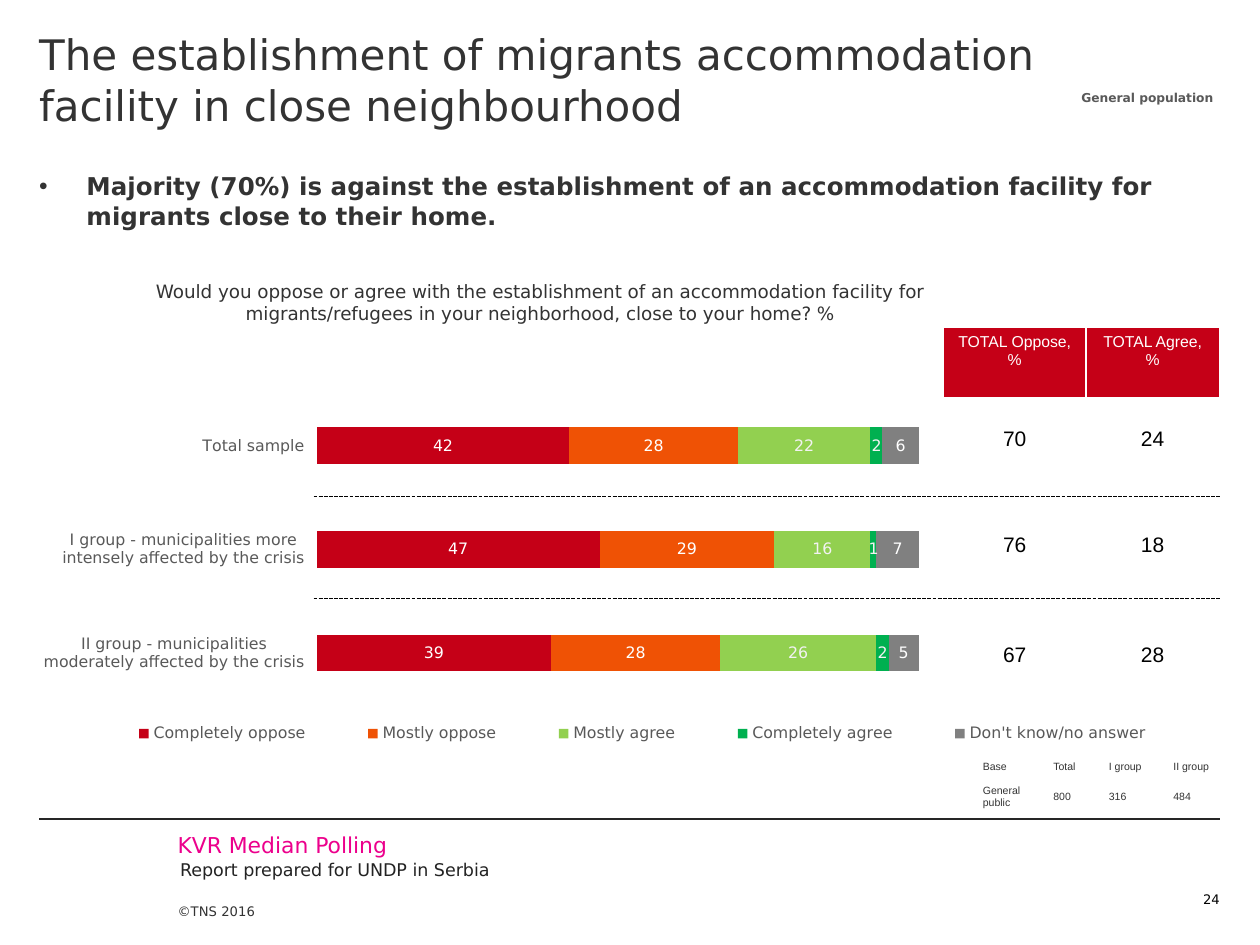
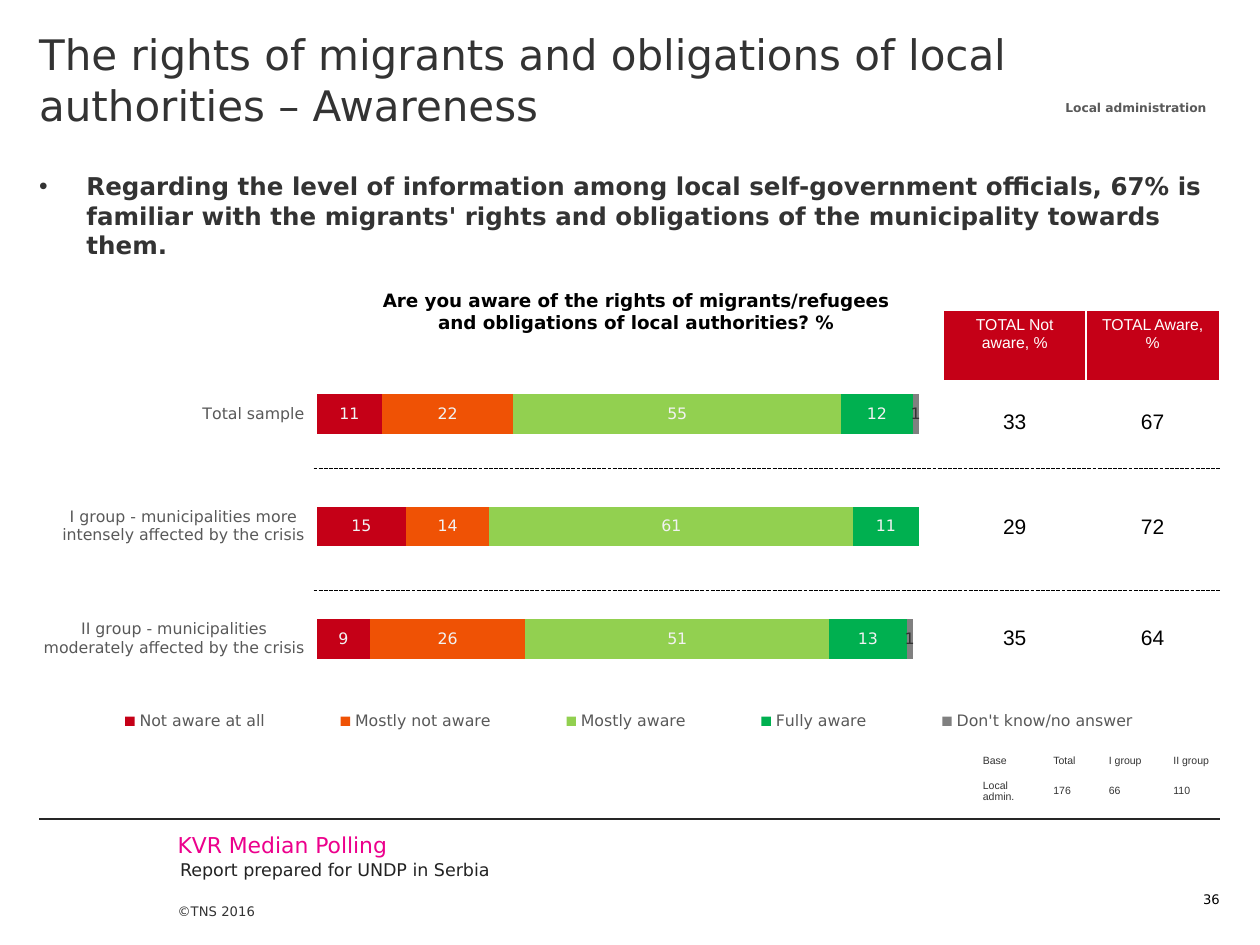
"""Builds two survey slides with stacked bars, totals and sample bases."""
from lxml.etree import SubElement
from pptx import Presentation
from pptx.chart.data import CategoryChartData
from pptx.dml.color import RGBColor
from pptx.enum.chart import XL_CHART_TYPE as ChartType, XL_LEGEND_POSITION as LegendPosition
from pptx.enum.dml import MSO_LINE as Dash
from pptx.enum.shapes import MSO_CONNECTOR as Connector
from pptx.enum.text import MSO_ANCHOR as Anchor, MSO_AUTO_SIZE as AutoSize, PP_ALIGN as Align
from pptx.oxml import parse_xml
from pptx.oxml.ns import nsdecls, qn
from pptx.util import Cm, Pt

SANS, ARIAL = "DejaVu Sans", "Arial"
RED, WHITE, PALE, DARK, GREY, BLACK = "C50017", "FFFFFF", "F2F2F2", "333333", "595959", "000000"
BAR_COLORS = [RED, "EF5205", "92D050", "00B050", "808080"]
LEFT, RIGHT, WIDTH = 0.79, 24.59, 23.8
CATEGORIES = [
    "Total sample",
    "I group - municipalities more intensely affected by the crisis",
    "II group - municipalities moderately affected by the crisis",
]
NO_MARGIN, USUAL_MARGIN = (0, 0, 0, 0), (0.25, 0.13, 0.25, 0.13)

PAGES = [
    {
        "title": "The establishment of migrants accommodation\vfacility in close neighbourhood",
        "message": "Majority (70%) is against the establishment of an accommodation "
                   "facility for migrants close to their home.",
        "question": "Would you oppose or agree with the establishment of an accommodation facility "
                    "for migrants/refugees in your neighborhood, close to your home? %",
        "question_place": (2.69, 5.51, 16.41, 1.14),
        "question_format": (DARK, False),
        "audience": "General population",
        "audience_place": (21.54, 1.7, 3.18, 0.56),
        "number": "24",
        "chart_top": 6.96,
        "axis_max": 100,
        "legend_place": (0.036, 0.79, 0.95, 0.06),
        "answers": {
            "Completely oppose": (42, 47, 39),
            "Mostly oppose": (28, 29, 28),
            "Mostly agree": (22, 16, 26),
            "Completely agree": (2, 1, 2),
            "Don't know/no answer": (6, 7, 5),
        },
        "label_colors": [WHITE, WHITE, PALE, PALE, WHITE],
        "totals_top": 6.6,
        "totals": [("TOTAL Oppose, %", "TOTAL Agree, %"), ("70", "24"), ("76", "18"), ("67", "28")],
        "separators": (10.01, 12.07),
        "base_top": 15.21,
        "base": ("General public", "800", "316", "484"),
    },
    {
        "title": "The rights of migrants and obligations of local\vauthorities – Awareness",
        "message": "Regarding the level of information among local self-government officials, 67% is "
                   "familiar with the migrants' rights and obligations of the municipality towards them.",
        "question": "Are you aware of the rights of migrants/refugees "
                    "and obligations of local authorities? %",
        "question_place": (7.11, 5.69, 11.43, 1.19),
        "question_format": (BLACK, True),
        "audience": "Local administration",
        "audience_place": (21.21, 1.9, 3.38, 0.56),
        "number": "36",
        "chart_top": 6.15,
        "axis_max": 101,
        "legend_place": (0.013, 0.78, 0.973, 0.06),
        "answers": {
            "Not aware at all": (11, 15, 9),
            "Mostly not aware": (22, 14, 26),
            "Mostly aware": (55, 61, 51),
            "Fully aware": (12, 11, 13),
            "Don't know/no answer": (1, None, 1),
        },
        "label_colors": [PALE, PALE, PALE, PALE, DARK],
        "totals_top": 6.25,
        "totals": [("TOTAL Not aware, %", "TOTAL Aware, %"), ("33", "67"), ("29", "72"), ("35", "64")],
        "separators": (9.45, 11.91),
        "base_top": 15.09,
        "base": ("Local admin.", "176", "66", "110"),
    },
]


def style(font, color, **values):
    """Set the colour and any other font attributes."""
    for name, value in values.items():
        setattr(font, name, value)
    font.color.rgb = RGBColor.from_string(color)


def write(frame, text, color, size, align=Align.LEFT, margins=None, anchor=None, name=SANS, bold=False):
    """Fill a text frame with one formatted paragraph."""
    frame.text = text
    if margins:
        for side, margin in zip(("left", "top", "right", "bottom"), margins):
            setattr(frame, "margin_" + side, Cm(margin))
    if anchor is not None:
        frame.vertical_anchor = anchor
    para = frame.paragraphs[0]
    para.alignment = align
    para.space_before = Pt(0)
    for span in para.runs:
        style(span.font, color, size=Pt(size), name=name, bold=bold)


deck = Presentation()
deck.slide_width, deck.slide_height = Cm(25.4), Cm(19.05)

for content in PAGES:
    page = deck.slides.add_slide(deck.slide_layouts[1])

    headings = [
        (page.shapes.title, content["title"], 0, 2.87, 24, False),
        (page.placeholders[1], content["message"], 2.87, 2.11, 14, True),
    ]
    for box, text, top, height, size, bold in headings:
        box.left, box.top, box.width, box.height = Cm(LEFT), Cm(top), Cm(WIDTH), Cm(height)
        properties = box.text_frame.paragraphs[0]._p.get_or_add_pPr()
        properties.set("marL", "0")
        properties.set("indent", "0")
        SubElement(properties, qn("a:buNone"))
        box.text_frame.auto_size = AutoSize.NONE
        write(box.text_frame, text, DARK, size, margins=(0, 0.58, 0, 0), anchor=Anchor.TOP, bold=bold)

    data = CategoryChartData(number_format="0")
    data.categories = CATEGORIES
    for answer, shares in content["answers"].items():
        data.add_series(answer, shares)
    top = content["chart_top"]
    chart = page.shapes.add_chart(
        ChartType.BAR_STACKED, Cm(LEFT), Cm(top), Cm(WIDTH), Cm(16.51 - top), data).chart
    style(chart.font, BLACK, size=Pt(10), name=SANS)
    chart.has_title = False
    chart.has_legend = True
    legend = chart.legend
    legend.position = LegendPosition.BOTTOM
    legend.include_in_layout = False
    style(legend.font, GREY, size=Pt(9), name=SANS)
    groups = chart.category_axis
    groups.reverse_order = True
    groups.format.line.fill.background()
    style(groups.tick_labels.font, GREY, size=Pt(9), name=SANS)
    scale = chart.value_axis
    scale.minimum_scale, scale.maximum_scale = 0, content["axis_max"]
    scale.has_major_gridlines = False
    scale.visible = False
    plot = chart.plots[0]
    plot.gap_width, plot.overlap, plot.vary_by_categories = 182, 100, False
    for series, fill, label_color in zip(plot.series, BAR_COLORS, content["label_colors"]):
        series.invert_if_negative = False
        series.format.fill.solid()
        series.format.fill.fore_color.rgb = RGBColor.from_string(fill)
        labels = series.data_labels
        labels.show_value = True
        labels.number_format, labels.number_format_is_linked = "0", False
        style(labels.font, label_color, size=Pt(9), name=SANS)

    plot_area = chart._chartSpace.find(".//" + qn("c:plotArea"))
    layouts = [
        (plot_area, 0, '<c:layoutTarget val="inner"/>', (0.235, 0.103, 0.51, 0.656)),
        (legend._element, 1, "", content["legend_place"]),
    ]
    for parent, position, target, place in layouts:
        for old in parent.findall(qn("c:layout")):
            parent.remove(old)
        modes = '<c:xMode val="edge"/><c:yMode val="edge"/>'
        sizes = "".join(f'<c:{key} val="{value}"/>' for key, value in zip("xywh", place))
        parent.insert(position, parse_xml(
            f'<c:layout {nsdecls("c")}><c:manualLayout>{target}{modes}{sizes}</c:manualLayout></c:layout>'))

    tables = [
        (content["totals"], 19.02, content["totals_top"],
         (2.87, 2.69), (1.42, 1.68, 2.57, 1.88), Align.CENTER),
        ([("Base", "Total", "I group", "II group"), content["base"]], 19.56, content["base_top"],
         (1.42, 1.12, 1.3, 1.42), (0.48, 0.74), Align.LEFT),
    ]
    for rows, left, top, widths, heights, align in tables:
        table = page.shapes.add_table(
            len(rows), len(widths), Cm(left), Cm(top), Cm(sum(widths)), Cm(sum(heights))).table
        table.first_row = table.horz_banding = False
        for column, width in zip(table.columns, widths):
            column.width = Cm(width)
        for row, height in zip(table.rows, heights):
            row.height = Cm(height)
        for index, texts in enumerate(rows):
            for cell, text in zip(table.rows[index].cells, texts):
                for edge in "LRTB":
                    cell._tc.get_or_add_tcPr().append(parse_xml(
                        f'<a:ln{edge} {nsdecls("a")} w="12700"><a:solidFill>'
                        f'<a:srgbClr val="{WHITE}"/></a:solidFill></a:ln{edge}>'))
                cell.fill.background()
                color, size, anchor = DARK, 6, Anchor.MIDDLE
                if align == Align.CENTER:
                    color, size = BLACK, 12
                    if index == 0:
                        color, size, anchor = WHITE, 9, Anchor.TOP
                        cell.fill.solid()
                        cell.fill.fore_color.rgb = RGBColor.from_string(RED)
                cell.vertical_anchor = anchor
                write(cell.text_frame, text, color, size, align, name=ARIAL)

    rules = [(LEFT, 16.51, "262626", Dash.SOLID)]
    rules += [(6.32, height, BLACK, Dash.SQUARE_DOT) for height in content["separators"]]
    for left, height, color, dash in rules:
        rule = page.shapes.add_connector(Connector.STRAIGHT, Cm(left), Cm(height), Cm(RIGHT), Cm(height))
        rule.line.color.rgb = RGBColor.from_string(color)
        rule.line.width = Pt(0.75)
        rule.line.dash_style = dash
        SubElement(rule._element.spPr, qn("a:effectLst"))

    question_color, question_bold = content["question_format"]
    boxes = [
        (content["question"], content["question_place"], True, question_color, 10.5,
         Align.CENTER, USUAL_MARGIN, Anchor.TOP, question_bold),
        (content["audience"], content["audience_place"], False, GREY, 7,
         Align.CENTER, USUAL_MARGIN, Anchor.TOP, True),
        ("KVR Median Polling", (3.58, 16.76, 8.41, 0.53), True, "EC008C", 12.5,
         Align.LEFT, NO_MARGIN, Anchor.TOP, False),
        ("Report prepared for UNDP in Serbia", (3.63, 17.32, 17.3, 0.45), True, "232323", 10,
         Align.LEFT, NO_MARGIN, Anchor.TOP, False),
        ("©TNS 2016", (3.58, 17.58, 2.11, 1.47), True, DARK, 7.5,
         Align.LEFT, (0, 0, 0, 0.74), Anchor.BOTTOM, False),
        (content["number"], (23.19, 17.58, 1.4, 0.71), True, BLACK, 7.5,
         Align.RIGHT, NO_MARGIN, Anchor.BOTTOM, False),
    ]
    for text, place, wrap, color, size, align, margins, anchor, bold in boxes:
        frame = page.shapes.add_textbox(*map(Cm, place)).text_frame
        frame.word_wrap = wrap
        write(frame, text, color, size, align, margins, anchor, bold=bold)

deck.save("out.pptx")
